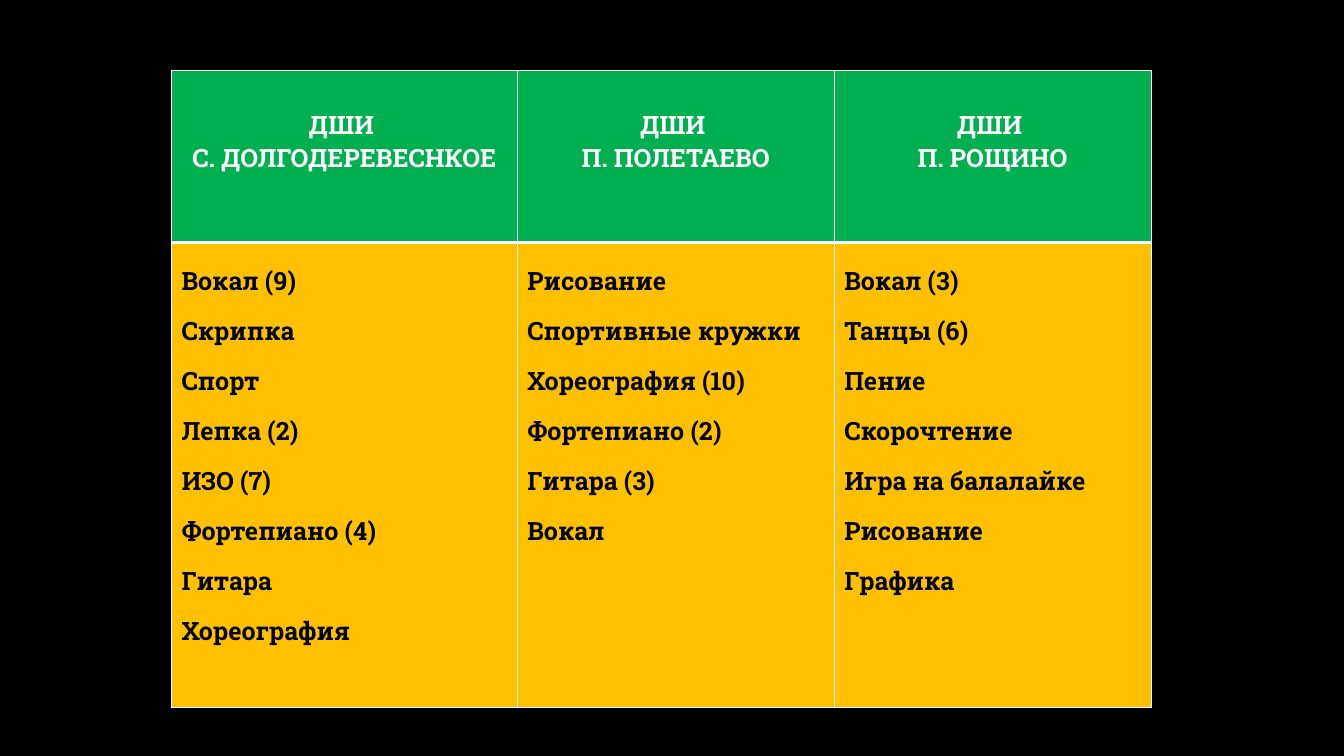
from lxml.etree import SubElement
from pptx import Presentation
from pptx.dml.color import RGBColor
from pptx.enum.text import MSO_ANCHOR as Anchor, PP_ALIGN as Align
from pptx.oxml.ns import qn
from pptx.util import Cm, Pt

COLORS = {
    "background": "000000",
    "header": "00B050",
    "body": "FFC000",
    "border": "FFFFFF",
    "header_text": "FFFFFF",
    "body_text": "000000",
}
FONT = {"name": "Roboto Slab", "size": Pt(18), "bold": True}
HEADER = {
    "cell": {"vertical_anchor": Anchor.MIDDLE, "margin_bottom": Cm(0.89)},
    "paragraph": {"alignment": Align.CENTER},
    "borders": {"L": 1, "R": 1, "T": 1, "B": 3},
    "fill": "header",
    "text": "header_text",
}
BODY = {
    "cell": {"vertical_anchor": Anchor.TOP},
    "paragraph": {"alignment": Align.LEFT, "line_spacing": 1.5},
    "borders": {"L": 1, "R": 1, "T": 3, "B": 1},
    "fill": "body",
    "text": "body_text",
}

SCHOOLS = [
    (["ДШИ ", "С. ДОЛГОДЕРЕВЕСНКОЕ"],
     ["Вокал (9)", "Скрипка", "Спорт", "Лепка (2)", "ИЗО (7)",
      "Фортепиано (4)", "Гитара", "Хореография"]),
    (["ДШИ ", "П. ПОЛЕТАЕВО"],
     ["Рисование", "Спортивные кружки", "Хореография (10)",
      "Фортепиано (2)", "Гитара (3)", "Вокал"]),
    (["ДШИ ", "П. РОЩИНО"],
     ["Вокал (3)", "Танцы (6)", "Пение", "Скорочтение",
      "Игра на балалайке", "Рисование", "Графика"]),
]
COLUMN_SHARES = [0.353, 0.3235, 0.3235]
ROW_SHARES = [0.27, 0.73]


def color(name):
    return RGBColor.from_string(COLORS[name])


def set_attributes(target, values):
    for name, value in values.items():
        setattr(target, name, value)


def add_borders(cell, widths):
    properties = cell._tc.get_or_add_tcPr()
    for side, width in widths.items():
        line = SubElement(properties, qn(f"a:ln{side}"), w=str(Pt(width)))
        fill = SubElement(line, qn("a:solidFill"))
        SubElement(fill, qn("a:srgbClr"), val=COLORS["border"])


def fill_cell(cell, lines, style):
    add_borders(cell, style["borders"])
    cell.fill.solid()
    cell.fill.fore_color.rgb = color(style["fill"])
    set_attributes(cell, style["cell"])
    cell.text_frame.text = "\n".join(lines)
    for paragraph in cell.text_frame.paragraphs:
        set_attributes(paragraph, style["paragraph"])
        for run in paragraph.runs:
            set_attributes(run.font, FONT)
            run.font.color.rgb = color(style["text"])


def add_schools_table(slide, left, top, width, height):
    table = slide.shapes.add_table(
        2, len(SCHOOLS), left, top, width, height).table
    for column, share in zip(table.columns, COLUMN_SHARES):
        column.width = int(width * share)
    for row, share in zip(table.rows, ROW_SHARES):
        row.height = int(height * share)
    for index, (school, activities) in enumerate(SCHOOLS):
        fill_cell(table.cell(0, index), school, HEADER)
        fill_cell(table.cell(1, index), activities, BODY)


def main():
    presentation = Presentation()
    presentation.slide_width = Cm(33.87)
    presentation.slide_height = Cm(19.05)
    slide = presentation.slides.add_slide(presentation.slide_layouts[6])
    slide.background.fill.solid()
    slide.background.fill.fore_color.rgb = color("background")
    add_schools_table(slide, Cm(4.32), Cm(1.78), Cm(24.69), Cm(16.05))
    presentation.save("out.pptx")


if __name__ == "__main__":
    main()
